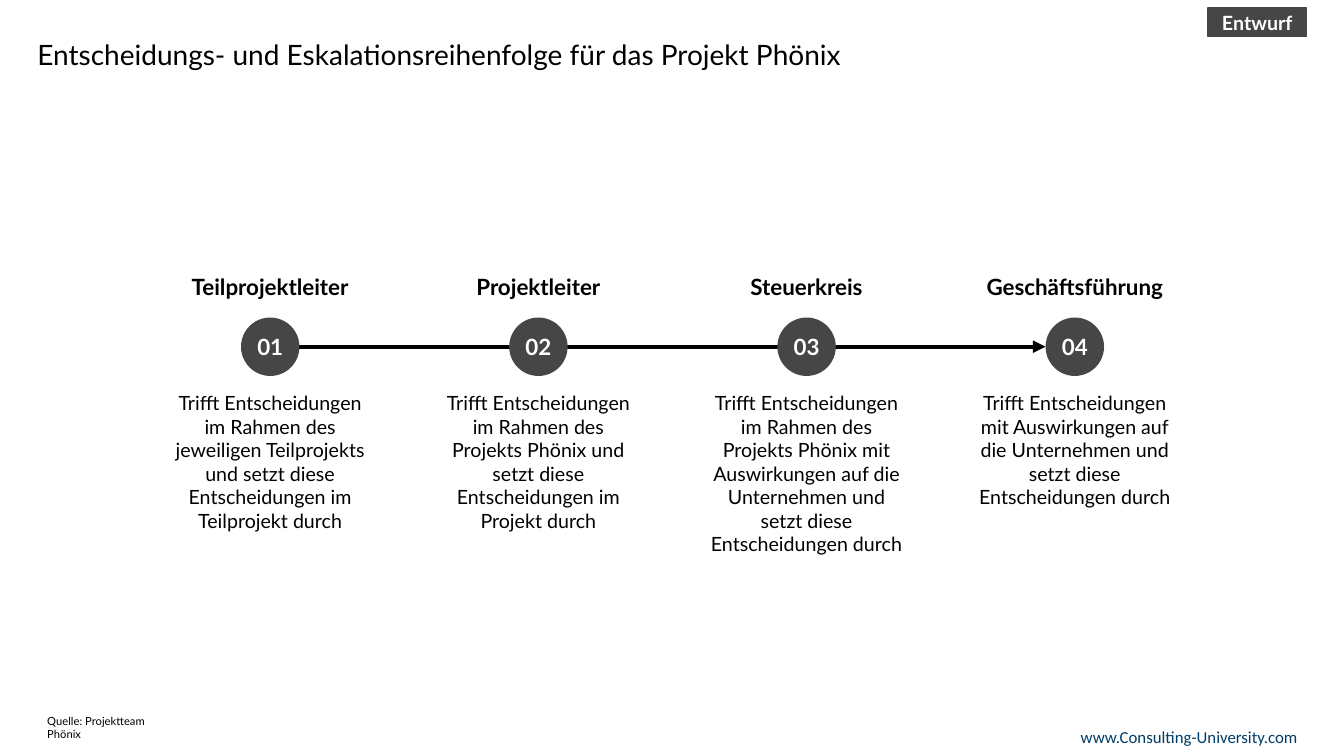
from lxml import etree
from pptx import Presentation
from pptx.dml.color import RGBColor
from pptx.enum.shapes import MSO_CONNECTOR as CONN, MSO_SHAPE as SHAPE
from pptx.enum.text import MSO_ANCHOR as ANCHOR, PP_ALIGN as ALIGN
from pptx.oxml.ns import qn
from pptx.util import Inches, Pt

TITLE = "Entscheidungs- und Eskalationsreihenfolge für das Projekt Phönix"
STATUS = "Entwurf"
SOURCE = "Quelle: Projektteam Phönix"
WEBSITE = "www.Consulting-University.com"
STEPS = [
    ("Teilprojektleiter", "Trifft Entscheidungen im Rahmen des jeweiligen Teilprojekts "
     "und setzt diese Entscheidungen im Teilprojekt durch"),
    ("Projektleiter", "Trifft Entscheidungen im Rahmen des Projekts Phönix "
     "und setzt diese Entscheidungen im Projekt durch"),
    ("Steuerkreis", "Trifft Entscheidungen im Rahmen des Projekts Phönix mit Auswirkungen "
     "auf die Unternehmen und setzt diese Entscheidungen durch"),
    ("Geschäftsführung", "Trifft Entscheidungen mit Auswirkungen auf die Unternehmen "
     "und setzt diese Entscheidungen durch"),
]

BLACK = RGBColor(0x00, 0x00, 0x00)
WHITE = RGBColor(0xFF, 0xFF, 0xFF)
GREY = RGBColor(0x46, 0x46, 0x46)
NAVY = RGBColor(0x00, 0x3D, 0x66)

FIRST_X, STEP_X, AXIS_Y = 2.68, 2.66, 3.44
CIRCLE, HEAD_W, BODY_W = 0.58, 1.97, 1.97


def write(sp, text, size, color=BLACK, bold=False, name="Lato",
          align=ALIGN.CENTER, anchor=ANCHOR.TOP, inset=(0, 0)):
    tf = sp.text_frame
    frame = {"word_wrap": True, "vertical_anchor": anchor,
             "margin_left": Inches(inset[0]), "margin_right": Inches(inset[0]),
             "margin_top": Inches(inset[1]), "margin_bottom": Inches(inset[1])}
    for key, value in frame.items():
        setattr(tf, key, value)
    p = tf.paragraphs[0]
    p.alignment = align
    r = p.add_run()
    r.text = text
    for key, value in {"size": Pt(size), "bold": bold, "name": name}.items():
        setattr(r.font, key, value)
    r.font.color.rgb = color
    return p


def add_text(s, box, text, size, **fmt):
    return write(s.shapes.add_textbox(*map(Inches, box)), text, size, **fmt)


def add_label(s, kind, box, text, size):
    sp = s.shapes.add_shape(kind, *map(Inches, box))
    sp.shadow.inherit = False
    sp.fill.solid()
    sp.fill.fore_color.rgb = GREY
    sp.line.fill.background()
    write(sp, text, size, color=WHITE, bold=True, anchor=ANCHOR.MIDDLE)
    return sp


def add_arrow(s, x1, x2, y):
    line = s.shapes.add_connector(CONN.STRAIGHT, *map(Inches, (x1, y, x2, y)))
    line.line.color.rgb = BLACK
    line.line.width = Pt(3)
    etree.SubElement(line.line._get_or_add_ln(), qn("a:tailEnd"), type="triangle")
    etree.SubElement(line._element.spPr, qn("a:effectLst"))


def main():
    prs = Presentation()
    prs.slide_width, prs.slide_height = Inches(13.33), Inches(7.5)
    s = prs.slides.add_slide(prs.slide_layouts[5])

    title = s.shapes.title
    for key, value in {"left": 0.37, "top": 0.36, "width": 12.6, "height": 0.59}.items():
        setattr(title, key, Inches(value))
    p = write(title, TITLE, 20, align=ALIGN.LEFT, inset=(0, 0.05))
    p.line_spacing = 0.9

    status = add_label(s, SHAPE.RECTANGLE, (11.98, 0.08, 0.98, 0.28), STATUS, 14)
    status.line.color.rgb = GREY
    status.line.width = Pt(1)

    add_text(s, (9.57, 7.16, 3.4, 0.3), WEBSITE, 12, color=NAVY, name="Calibri",
             align=ALIGN.RIGHT, anchor=ANCHOR.MIDDLE, inset=(0.1, 0.05))
    add_text(s, (0.37, 7.16, 1.5, 0.24), SOURCE, 8, align=ALIGN.LEFT,
             anchor=ANCHOR.BOTTOM, inset=(0.1, 0.05))

    radius = CIRCLE / 2
    last_x = FIRST_X + STEP_X * (len(STEPS) - 1)
    add_arrow(s, FIRST_X + radius, last_x - radius, AXIS_Y)
    for i, (role, duty) in enumerate(STEPS):
        x = FIRST_X + i * STEP_X
        add_text(s, (x - HEAD_W / 2, 2.71, HEAD_W, 0.27), role, 16, bold=True,
                 anchor=ANCHOR.BOTTOM)
        add_label(s, SHAPE.OVAL, (x - radius, AXIS_Y - radius, CIRCLE, CIRCLE),
                  f"{i + 1:02d}", 16)
        add_text(s, (x - BODY_W / 2, 3.88, BODY_W, 1.41), duty, 14)

    prs.save("out.pptx")


if __name__ == "__main__":
    main()
